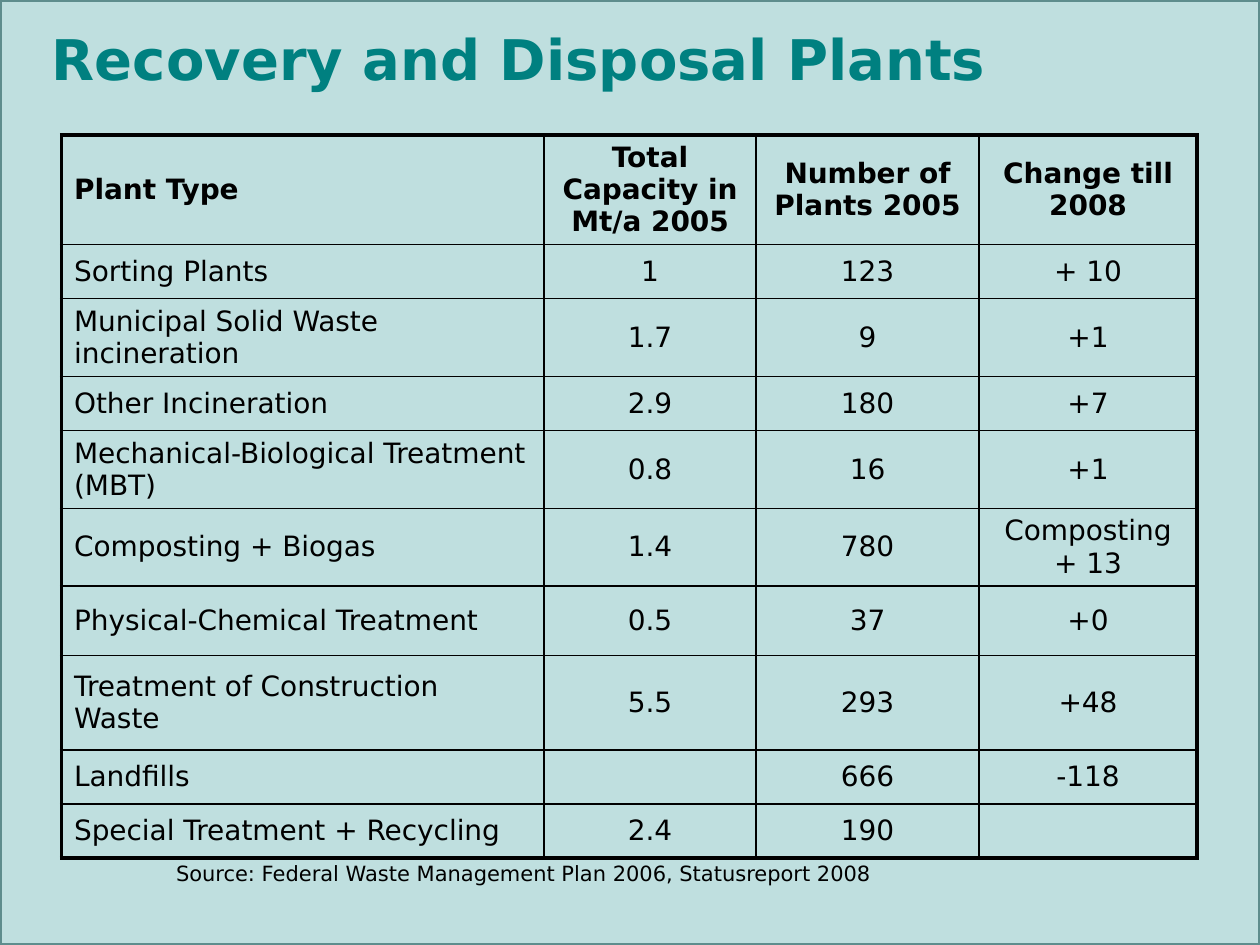
from lxml.etree import SubElement
from pptx import Presentation
from pptx.dml.color import RGBColor
from pptx.enum.shapes import MSO_SHAPE
from pptx.enum.text import MSO_ANCHOR, PP_ALIGN
from pptx.oxml.ns import qn
from pptx.util import Cm, Pt

FONT = "DejaVu Sans"
TITLE = "Recovery and Disposal Plants"
SOURCE = "Source: Federal Waste Management Plan 2006, Statusreport 2008"
ROWS = [
    ("Plant Type", "Total Capacity in Mt/a 2005", "Number of Plants 2005", "Change till 2008"),
    ("Sorting Plants", "1", "123", "+ 10"),
    ("Municipal Solid Waste incineration", "1.7", "9", "+1"),
    ("Other Incineration", "2.9", "180", "+7"),
    ("Mechanical-Biological Treatment (MBT)", "0.8", "16", "+1"),
    ("Composting + Biogas", "1.4", "780", "Composting + 13"),
    ("Physical-Chemical Treatment", "0.5", "37", "+0"),
    ("Treatment of Construction Waste", "5.5", "293", "+48"),
    ("Landfills", "", "666", "-118"),
    ("Special Treatment + Recycling", "2.4", "190", ""),
]
COL_WIDTHS = [9.73, 4.27, 4.5, 4.39]
ROW_HEIGHTS = [2.2, 1.09, 1.57, 1.09, 1.57, 1.56, 1.4, 1.91, 1.09, 1.09]
THIN, THICK = 1, 2.25


def rgb(color):
    return RGBColor.from_string(color)


def write(tf, text, size, color="000000", bold=False, align=PP_ALIGN.LEFT):
    p = tf.paragraphs[0]
    p.alignment = align
    p.space_before = Pt(0)
    p.font.size = Pt(size)
    if text:
        r = p.add_run()
        r.text = text
        r.font.name = FONT
        r.font.size = Pt(size)
        r.font.bold = bold
        r.font.color.rgb = rgb(color)


def set_borders(cell, widths):
    tcPr = cell._tc.get_or_add_tcPr()
    for i, (side, width) in enumerate(widths.items()):
        ln = SubElement(tcPr, qn(f"a:ln{side}"), w=str(Pt(width)))
        fill = SubElement(ln, qn("a:solidFill"))
        SubElement(fill, qn("a:srgbClr"), val="000000")
        tcPr.insert(i, ln)


def add_background(s, prs):
    sp = s.shapes.add_shape(MSO_SHAPE.RECTANGLE, 0, 0, prs.slide_width, prs.slide_height)
    sp.shadow.inherit = False
    sp.fill.solid()
    sp.fill.fore_color.rgb = rgb("BFDFDF")
    sp.line.color.rgb = rgb("5E8D8D")
    sp.line.width = Pt(2)
    s.shapes._spTree.insert(2, sp._element)


def add_title(s):
    title = s.shapes.title
    title.left, title.top, title.width, title.height = Cm(0.79), Cm(0), Cm(21.59), Cm(2.34)
    title.text_frame.vertical_anchor = MSO_ANCHOR.MIDDLE
    write(title.text_frame, TITLE, 32, "008080", True)


def add_plant_table(s):
    last_row, last_col = len(ROWS) - 1, len(COL_WIDTHS) - 1
    table = s.shapes.add_table(
        len(ROWS), len(COL_WIDTHS), Cm(1.24), Cm(2.72), Cm(sum(COL_WIDTHS)), Cm(sum(ROW_HEIGHTS))
    ).table
    table.first_row = table.horz_banding = False
    for column, width in zip(table.columns, COL_WIDTHS):
        column.width = Cm(width)
    for i, (values, height) in enumerate(zip(ROWS, ROW_HEIGHTS)):
        table.rows[i].height = Cm(height)
        for j, text in enumerate(values):
            cell = table.cell(i, j)
            cell.fill.background()
            cell.vertical_anchor = MSO_ANCHOR.MIDDLE
            align = PP_ALIGN.CENTER if j else PP_ALIGN.LEFT
            write(cell.text_frame, text, 16, bold=i == 0, align=align)
            set_borders(cell, {
                "L": THIN if j else THICK,
                "R": THICK if j == last_col else THIN,
                "T": THIN if i else THICK,
                "B": THICK if i == last_row else THIN,
            })


def add_source(s):
    tf = s.shapes.add_textbox(Cm(3.3), Cm(17.22), Cm(15.42), Cm(0.76)).text_frame
    tf.word_wrap = True
    write(tf, SOURCE, 12)


def main():
    prs = Presentation()
    prs.slide_width, prs.slide_height = Cm(25.4), Cm(19.05)
    s = prs.slides.add_slide(prs.slide_layouts[5])
    add_background(s, prs)
    add_title(s)
    add_plant_table(s)
    add_source(s)
    prs.save("out.pptx")


if __name__ == "__main__":
    main()
